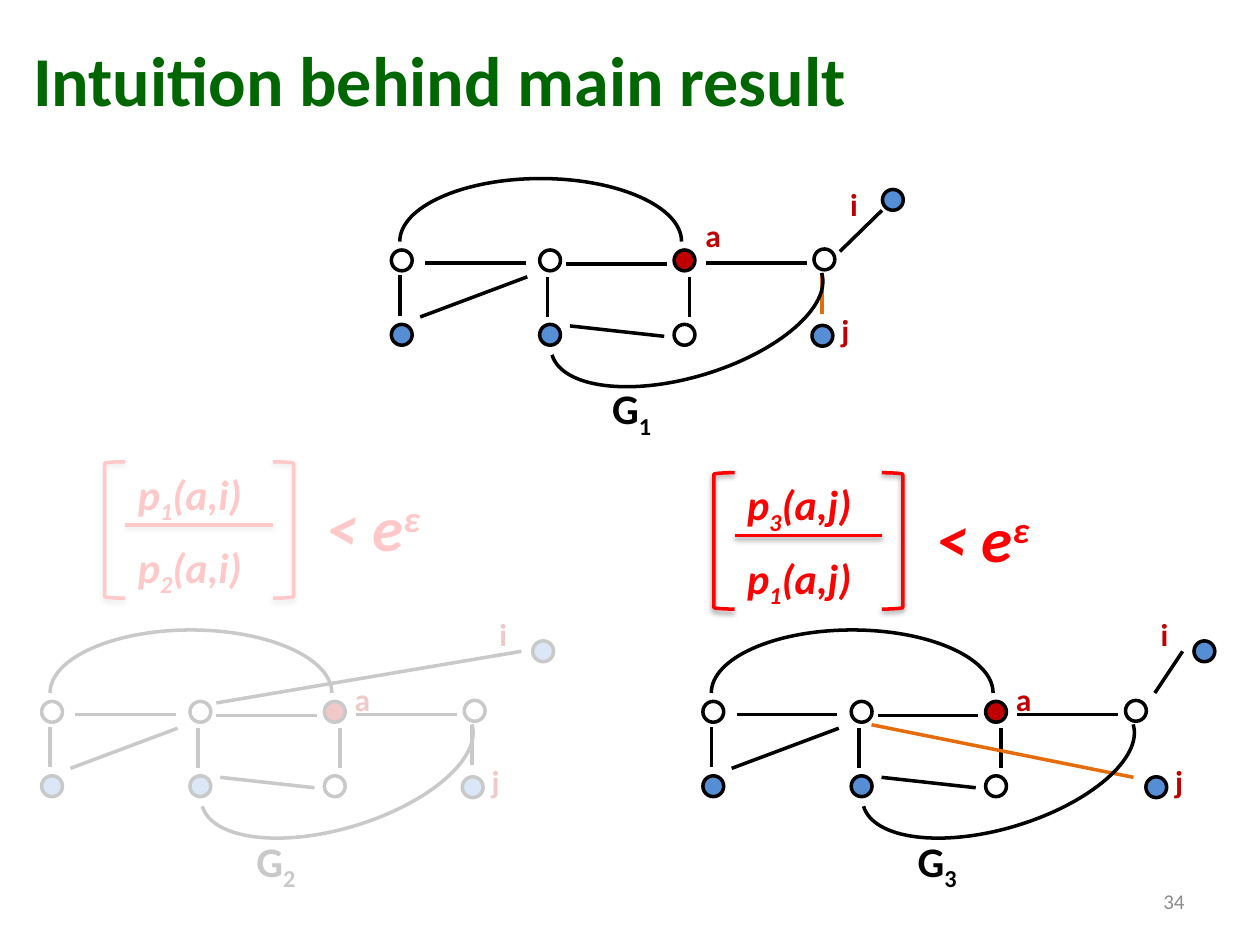
from dataclasses import dataclass

from lxml import etree
from pptx import Presentation
from pptx.dml.color import RGBColor
from pptx.enum.shapes import MSO_CONNECTOR, MSO_SHAPE
from pptx.enum.text import MSO_ANCHOR, PP_ALIGN
from pptx.oxml.ns import qn
from pptx.util import Cm, Pt

STRAIGHT = MSO_CONNECTOR.STRAIGHT
OVAL, RECTANGLE = MSO_SHAPE.OVAL, MSO_SHAPE.RECTANGLE
LEFT_BRACKET, RIGHT_BRACKET = MSO_SHAPE.LEFT_BRACKET, MSO_SHAPE.RIGHT_BRACKET
TOP, MIDDLE = MSO_ANCHOR.TOP, MSO_ANCHOR.MIDDLE
LEFT, RIGHT = PP_ALIGN.LEFT, PP_ALIGN.RIGHT

Point = tuple[float, float]
Edge = tuple[Point, Point]


@dataclass(frozen=True)
class Theme:
    font: str = "Calibri"
    title: str = "006600"
    number: str = "8C8C8C"
    ink: str = "000000"
    paper: str = "FFFFFF"
    blue: str = "558ED5"
    red: str = "C00000"
    orange: str = "E46C0A"
    formula: str = "FF0000"
    title_size: int = 40
    bound_size: int = 36
    body_size: int = 24
    node_size: int = 18
    number_size: int = 12
    line_width: int = 2


THEME = Theme()


@dataclass(frozen=True)
class Style:
    size: int
    color: str
    bold: bool = True
    italic: bool = False


@dataclass(frozen=True)
class Graph:
    """One graph; points are centimetres from its origin."""
    index: str
    origin: Point
    edge_i: Edge
    edge_j: Edge
    color_j: str
    node_j: Point = (8.31, 2.96)
    label_a: Point = (5.89, 0.89)
    label_i: Point = (8.81, -0.43)
    caption: Point = (3.91, 4.01)


@dataclass(frozen=True)
class Ratio:
    origin: Point
    above: str
    below: str
    pair: str


SHORT_J = ((8.51, 1.91), (8.51, 2.72))
GRAPH_2 = Graph("2", (1.01, 12.7), ((3.35, 1.47), (9.5, 0.43)), SHORT_J, THEME.ink)
GRAPH_3 = Graph("3", (14.34, 12.7), ((8.94, 1.27), (9.5, 0.43)),
                ((3.23, 1.91), (8.51, 2.97)), THEME.orange, node_j=(8.76, 2.96))
GRAPH_1 = Graph("1", (8.06, 3.6), ((8.87, 1.47), (9.72, 0.64)), SHORT_J, THEME.orange,
                label_a=(5.91, 0.64), label_i=(8.83, 0), caption=(4.03, 3.99))
RATIO_I = Ratio((2.11, 9.31), "1", "2", "(a,i)")
RATIO_J = Ratio((14.39, 9.53), "3", "1", "(a,j)")

SHARED_EDGES = (
    ((0, 1.95), (0, 2.77)), ((2.98, 1.98), (2.98, 2.79)), ((5.84, 1.98), (5.84, 2.79)),
    ((0.41, 2.79), (2.57, 1.98)), ((3.35, 1.72), (5.38, 1.72)),
    ((3.43, 2.97), (5.33, 3.18)), ((0.51, 1.7), (2.54, 1.7)), ((6.17, 1.7), (8.2, 1.7)))
SHARED_NODES = (
    ((-0.17, 1.44), None), ((-0.17, 2.94), THEME.blue), ((2.82, 2.94), THEME.blue),
    ((2.82, 1.44), None), ((5.53, 1.44), THEME.red), ((5.53, 2.94), None),
    ((8.35, 1.42), None), ((9.73, 0.22), THEME.blue))
NODE = 0.42
ARC_WIDTH, ARC_HEIGHT = 5.68, 1.27
ROUNDNESS = 0.55


def shift(origin: Point, point: Point) -> Point:
    return origin[0] + point[0], origin[1] + point[1]


def add_text(shapes, at: Point, size: Point, spans, style: Style,
             anchor=TOP, align=LEFT, wrap: bool = True) -> None:
    """Add a text box from (text, baseline percent) spans."""
    box = shapes.add_textbox(*map(Cm, at + size))
    frame = box.text_frame
    frame.word_wrap = wrap
    frame.vertical_anchor = anchor
    para = frame.paragraphs[0]
    para.alignment = align
    for text, baseline in spans:
        span = para.add_run()
        span.text = text
        font = span.font
        font.name, font.size = THEME.font, Pt(style.size)
        font.bold, font.italic = style.bold, style.italic
        font.color.rgb = RGBColor.from_string(style.color)
        if baseline:
            span._r.get_or_add_rPr().set("baseline", str(baseline * 1000))


def set_line(shape, color: str) -> None:
    shape.line.color.rgb = RGBColor.from_string(color)
    shape.line.width = Pt(THEME.line_width)


def set_effects(shape, shadow: bool) -> None:
    effects = etree.SubElement(shape._element.spPr, qn("a:effectLst"))
    if shadow:
        outer = etree.SubElement(effects, qn("a:outerShdw"), blurRad=str(Pt(3.1)),
                                 dist=str(Pt(1.6)), dir="5400000", rotWithShape="0")
        tint = etree.SubElement(outer, qn("a:srgbClr"), val=THEME.ink)
        etree.SubElement(tint, qn("a:alpha"), val="38000")


def add_edge(shapes, start: Point, end: Point, color: str, shadow: bool = False) -> None:
    edge = shapes.add_connector(STRAIGHT, *map(Cm, start + end))
    set_line(edge, color)
    set_effects(edge, shadow)


def add_node(shapes, at: Point, fill: str | None) -> None:
    node = shapes.add_shape(OVAL, *map(Cm, at + (NODE, NODE)))
    node.shadow.inherit = False
    set_line(node, THEME.ink)
    if fill is None:
        node.fill.background()
    else:
        node.fill.solid()
        node.fill.fore_color.rgb = RGBColor.from_string(fill)


def add_arc(shapes, at: Point, rotation: float = 0) -> None:
    """Add the upper half of an ellipse as two curves."""
    half, height = ARC_WIDTH / 2, ARC_HEIGHT
    corners = [tuple(map(Cm, shift(at, corner)))
               for corner in ((0, height), (half, 0), (ARC_WIDTH, height))]
    builder = shapes.build_freeform(*corners[0])
    builder.add_line_segments(corners[1:], close=False)
    arc = builder.convert_to_shape()
    rise, reach = height * (1 - ROUNDNESS), half * ROUNDNESS
    controls = (((0, rise), (half - reach, 0)), ((half + reach, 0), (ARC_WIDTH, rise)))
    for segment, pair in zip(list(arc._element.iter(qn("a:lnTo"))), controls):
        segment.tag = qn("a:cubicBezTo")
        for order, (x, y) in enumerate(pair):
            control = etree.Element(qn("a:pt"), x=str(Cm(x)), y=str(Cm(y)))
            segment.insert(order, control)
    arc.rotation = rotation
    arc.shadow.inherit = False
    arc.fill.background()
    set_line(arc, THEME.ink)


def add_graph(page, graph: Graph) -> None:
    shapes = page.shapes.add_group_shape().shapes
    edges = [(edge, THEME.ink) for edge in SHARED_EDGES + (graph.edge_i,)]
    for (start, end), color in edges + [(graph.edge_j, graph.color_j)]:
        add_edge(shapes, shift(graph.origin, start), shift(graph.origin, end), color)
    add_arc(shapes, graph.origin)
    for at, fill in SHARED_NODES + ((graph.node_j, THEME.blue),):
        add_node(shapes, shift(graph.origin, at), fill)
    add_arc(shapes, shift(graph.origin, (3.13, 2.7)), 163.1)
    label_j = shift(graph.node_j, (0.34, -0.42))
    for name, at, width in (("a", graph.label_a, 0.84), ("i", graph.label_i, 0.66),
                            ("j", label_j, 0.69)):
        add_text(shapes, shift(graph.origin, at), (width, 1.02), [(name, 0)],
                 Style(THEME.node_size, THEME.red), wrap=False)
    add_text(shapes, shift(graph.origin, graph.caption), (1.35, 1.27),
             [("G", 0), (graph.index, -25)], Style(THEME.body_size, THEME.ink), wrap=False)


def add_ratio(page, ratio: Ratio) -> None:
    shapes = page.shapes.add_group_shape().shapes
    term = Style(THEME.body_size, THEME.formula, italic=True)
    for index, top in ((ratio.above, 0), (ratio.below, 1.48)):
        add_text(shapes, shift(ratio.origin, (0.42, top)), (2.97, 1.27),
                 [("p", 0), (index, -25), (ratio.pair, 0)], term)
    add_edge(shapes, shift(ratio.origin, (0.42, 1.27)), shift(ratio.origin, (3.39, 1.27)),
             THEME.formula, shadow=True)
    for kind, left in ((LEFT_BRACKET, 0), (RIGHT_BRACKET, 3.39)):
        at = shift(ratio.origin, (left, 0))
        bracket = shapes.add_shape(kind, *map(Cm, at + (0.42, 2.75)))
        bracket.fill.background()
        set_line(bracket, THEME.formula)
        set_effects(bracket, shadow=True)
    add_text(shapes, shift(ratio.origin, (4.23, 0.42)), (2.54, 1.8),
             [("< e", 0), ("ε", 30)], Style(THEME.bound_size, THEME.formula, italic=True))


def add_veil(page) -> None:
    """Fade the left-hand case with a translucent sheet."""
    veil = page.shapes.add_shape(RECTANGLE, Cm(-1.07), Cm(8.89), Cm(13.76), Cm(9.74))
    veil.shadow.inherit = False
    veil.line.fill.background()
    veil.fill.solid()
    veil.fill.fore_color.rgb = RGBColor.from_string(THEME.paper)
    tint = veil._element.spPr.find(qn("a:solidFill"))[0]
    etree.SubElement(tint, qn("a:alpha"), val="79000")


def main() -> None:
    deck = Presentation()
    deck.slide_width, deck.slide_height = Cm(25.4), Cm(19.05)
    page = deck.slides.add_slide(deck.slide_layouts[6])
    add_text(page.shapes, (0.42, 0), (24.33, 3.18), [("Intuition behind main result", 0)],
             Style(THEME.title_size, THEME.title), MIDDLE)
    add_text(page.shapes, (18.2, 17.66), (5.93, 1.01), [("34", 0)],
             Style(THEME.number_size, THEME.number, bold=False), MIDDLE, RIGHT)
    for graph, ratio in ((GRAPH_2, RATIO_I), (GRAPH_3, RATIO_J)):
        add_graph(page, graph)
        add_ratio(page, ratio)
    add_veil(page)
    add_graph(page, GRAPH_1)
    deck.save("out.pptx")


if __name__ == "__main__":
    main()
